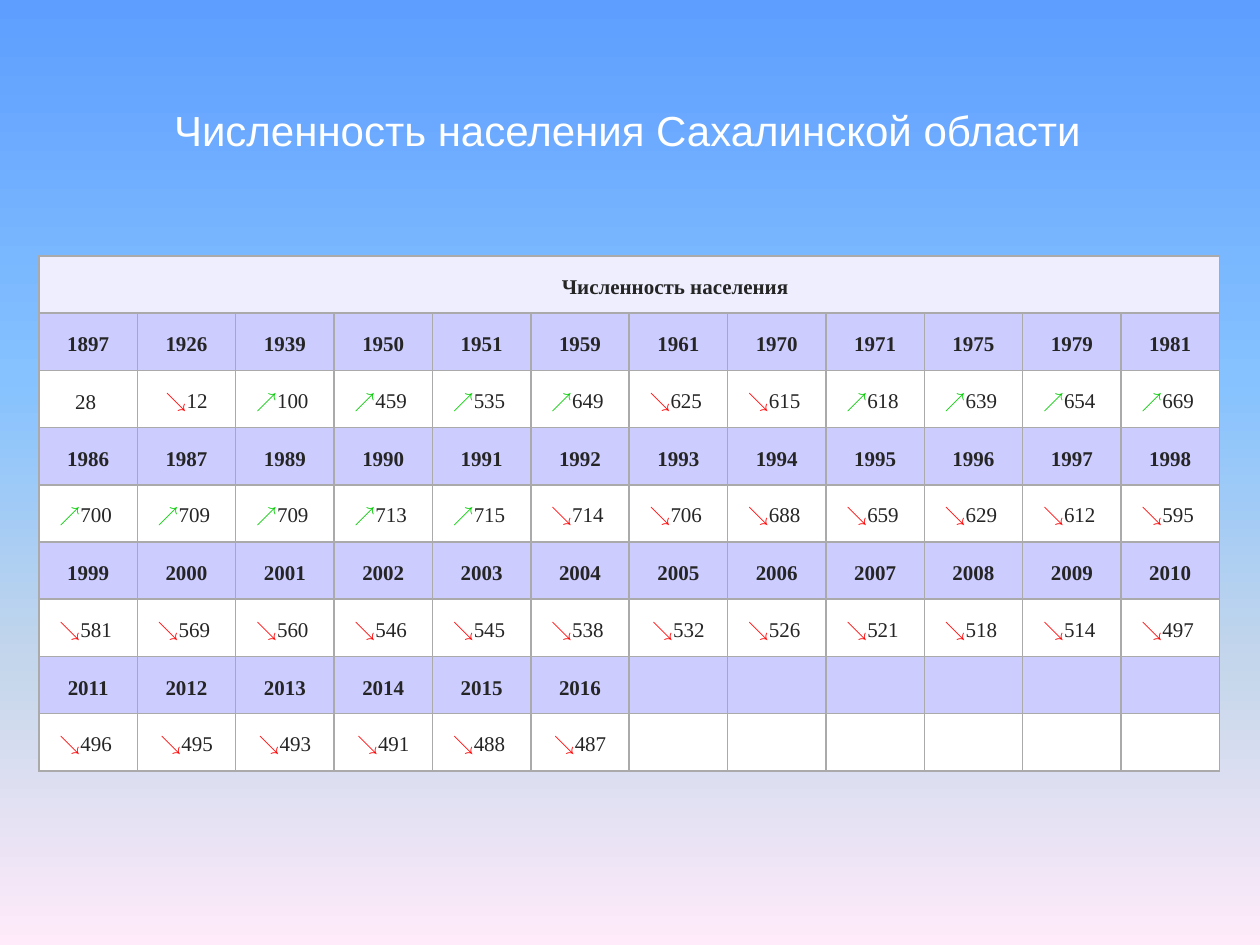
from copy import deepcopy

from lxml.etree import SubElement
from pptx import Presentation
from pptx.dml.color import RGBColor
from pptx.enum.text import MSO_ANCHOR, MSO_AUTO_SIZE, PP_ALIGN
from pptx.oxml import parse_xml
from pptx.oxml.ns import nsdecls, qn
from pptx.util import Emu, Pt

PX = 914400 // 126
TITLE = "Численность населения Сахалинской области"
HEADER = "Численность населения"
ROWS = [
    ("1897 1926 1939 1950 1951 1959 1961 1970 1971 1975 1979 1981",
     "28 ↘12 ↗100 ↗459 ↗535 ↗649 ↘625 ↘615 ↗618 ↗639 ↗654 ↗669"),
    ("1986 1987 1989 1990 1991 1992 1993 1994 1995 1996 1997 1998",
     "↗700 ↗709 ↗709 ↗713 ↗715 ↘714 ↘706 ↘688 ↘659 ↘629 ↘612 ↘595"),
    ("1999 2000 2001 2002 2003 2004 2005 2006 2007 2008 2009 2010",
     "↘581 ↘569 ↘560 ↘546 ↘545 ↘538 ↘532 ↘526 ↘521 ↘518 ↘514 ↘497"),
    ("2011 2012 2013 2014 2015 2016",
     "↘496 ↘495 ↘493 ↘491 ↘488 ↘487"),
]
COLUMNS = 12
HARD_SPACE = chr(160)
WITHOUT_HARD_SPACE = {"1926", "2005", "2012", "2013", "2014", "2016"}

WHITE = RGBColor(0xFF, 0xFF, 0xFF)
INK = RGBColor(0x25, 0x25, 0x25)
HEADER_FILL = RGBColor(0xEE, 0xEE, 0xFF)
YEAR_FILL = RGBColor(0xCC, 0xCC, 0xFF)
BORDER = RGBColor(0xAA, 0xAA, 0xAA)
ARROWS = {"↗": RGBColor(0x00, 0xCC, 0x00), "↘": RGBColor(0xFF, 0x00, 0x00)}
SKY = [(0, RGBColor(0x5E, 0x9E, 0xFF)), (40, RGBColor(0x85, 0xC2, 0xFF)),
       (70, RGBColor(0xC4, 0xD6, 0xEB)), (100, RGBColor(0xFF, 0xEB, 0xFA))]


def px(value):
    return Emu(value * PX)


def add_text(para, text, font="Times New Roman", size=12, color=INK, bold=False):
    para.alignment = PP_ALIGN.CENTER
    span = para.add_run()
    span.text = text
    span.font.name = font
    span.font.size = Pt(size)
    span.font.bold = bold
    span.font.color.rgb = color


def paint_background(slide):
    fill = slide.background.fill
    fill.gradient()
    fill.gradient_angle = 270
    first = fill.gradient_stops[0]._gs
    stop_list = first.getparent()
    for extra in range(len(SKY) - len(fill.gradient_stops)):
        stop_list.append(deepcopy(first))
    for stop, (percent, color) in zip(fill.gradient_stops, SKY):
        stop.position = percent / 100
        stop.color.rgb = color


def style_cell(cell, color):
    cell.margin_left = cell.margin_right = px(4)
    cell.margin_top = cell.margin_bottom = px(1)
    cell.vertical_anchor = MSO_ANCHOR.MIDDLE
    cell.fill.solid()
    cell.fill.fore_color.rgb = color
    properties = cell._tc.get_or_add_tcPr()
    for place, side in enumerate(("lnL", "lnR", "lnT", "lnB")):
        properties.insert(place, parse_xml(
            f'<a:{side} {nsdecls("a")} w="12700"><a:solidFill>'
            f'<a:srgbClr val="{BORDER}"/></a:solidFill></a:{side}>'))


def fill_row(table, row, texts, color, bold):
    for column in range(COLUMNS):
        cell = table.cell(row, column)
        style_cell(cell, color)
        if column >= len(texts):
            continue
        para = cell.text_frame.paragraphs[0]
        para.line_spacing = Pt(16.8)
        text = texts[column]
        if text[0] in ARROWS:
            add_text(para, text[0], font="Cambria", color=ARROWS[text[0]], bold=True)
            text = text[1:]
        add_text(para, text, bold=bold)


def add_population_table(slide):
    frame = slide.shapes.add_table(
        1 + 2 * len(ROWS), COLUMNS, px(39), px(256), px(1181), px(515))
    table = frame.table
    table.first_row = table.horz_banding = False
    fill_row(table, 0, [HEADER], HEADER_FILL, bold=True)
    header = table.cell(0, 0)
    header.merge(table.cell(0, COLUMNS - 1))
    header.text_frame.paragraphs[0]._p.get_or_add_pPr().set("indent", str(px(92)))
    for index, (year_line, value_line) in enumerate(ROWS):
        years = year_line.split()
        values = [value if year in WITHOUT_HARD_SPACE else value + HARD_SPACE
                  for year, value in zip(years, value_line.split())]
        fill_row(table, 1 + 2 * index, years, YEAR_FILL, bold=True)
        fill_row(table, 2 + 2 * index, values, WHITE, bold=False)


def add_title(slide):
    title = slide.shapes.title
    title.left, title.top, title.width, title.height = px(157), px(98), px(941), px(63)
    box = title.text_frame
    box.word_wrap = False
    box.auto_size = MSO_AUTO_SIZE.SHAPE_TO_FIT_TEXT
    box.vertical_anchor = MSO_ANCHOR.MIDDLE
    add_text(box.paragraphs[0], TITLE, font="Arial", size=24, color=WHITE)


def main():
    deck = Presentation()
    deck.slide_width, deck.slide_height = px(1260), px(945)
    page = deck.slides.add_slide(deck.slide_layouts[5])
    paint_background(page)
    add_population_table(page)
    add_title(page)
    deck.save("out.pptx")


if __name__ == "__main__":
    main()
